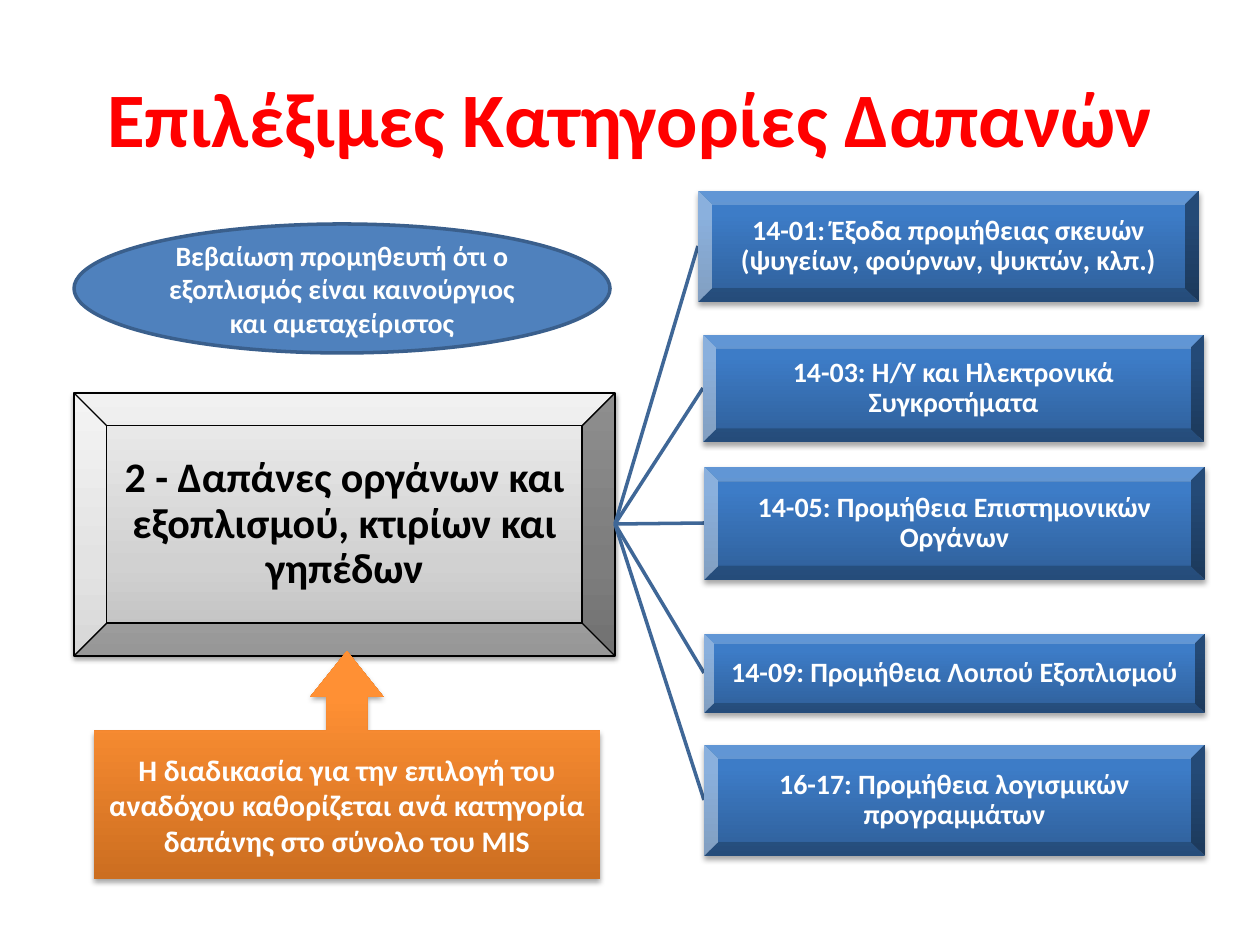
from dataclasses import dataclass

from lxml import etree
from pptx import Presentation
from pptx.dml.color import RGBColor
from pptx.enum.shapes import MSO_CONNECTOR, MSO_SHAPE
from pptx.enum.text import MSO_ANCHOR, PP_ALIGN
from pptx.oxml.ns import qn
from pptx.util import Emu, Pt

BEVEL = MSO_SHAPE.BEVEL
OVAL = MSO_SHAPE.OVAL
UP_ARROW_CALLOUT = MSO_SHAPE.UP_ARROW_CALLOUT
STRAIGHT = MSO_CONNECTOR.STRAIGHT
MIDDLE = MSO_ANCHOR.MIDDLE
CENTER = PP_ALIGN.CENTER

EMU_PER_PX = 914400 / 126
FONT = "Calibri"
WHITE = "FFFFFF"
BLACK = "000000"
GREY_STOPS = ((0, "BDBDBD"), (35, "D1D1D1"), (100, "EEEEEE"))
BLUE_STOPS = ((0, "2F5F99"), (80, "3D7CC7"), (100, "3A7CCB"))
ORANGE_STOPS = ((0, "CC6E20"), (80, "FF9034"), (100, "FF9136"))


@dataclass(frozen=True)
class Box:
    text: str
    left: int
    top: int
    width: int
    height: int

    @property
    def middle(self) -> int:
        return self.top + self.height // 2

    @property
    def right(self) -> int:
        return self.left + self.width


TITLE = Box("Επιλέξιμες Κατηγορίες Δαπανών", 63, 38, 1134, 158)
CATEGORY = Box("2 - Δαπάνες οργάνων και εξοπλισμού, κτιρίων και γηπέδων", 74, 393, 541, 263)
EXPENSES = (
    Box("14-01: Έξοδα προμήθειας σκευών (ψυγείων, φούρνων, ψυκτών, κλπ.)", 698, 191, 501, 111),
    Box("14-03: Η/Υ και Ηλεκτρονικά Συγκροτήματα", 703, 335, 501, 107),
    Box("14-05: Προμήθεια Επιστημονικών Οργάνων", 704, 467, 501, 113),
    Box("14-09: Προμήθεια Λοιπού Εξοπλισμού", 704, 634, 501, 79),
    Box("16-17: Προμήθεια λογισμικών προγραμμάτων", 704, 745, 501, 111),
)
CERTIFICATE = Box("Βεβαίωση προμηθευτή ότι ο εξοπλισμός είναι καινούργιος και αμεταχείριστος",
                  74, 224, 536, 129)
PROCEDURE = Box("Η διαδικασία για την επιλογή του αναδόχου καθορίζεται ανά κατηγορία δαπάνης "
                "στο σύνολο του MIS", 94, 651, 506, 228)


def px(length: int) -> Emu:
    return Emu(round(length * EMU_PER_PX))


def color(value: str) -> RGBColor:
    return RGBColor.from_string(value)


def write_text(shape, text: str, *, size: int, fill: str = WHITE,
               spacing: float | None = None, inset: int | None = None) -> None:
    frame = shape.text_frame
    frame.word_wrap = True
    frame.vertical_anchor = MIDDLE
    if inset is not None:
        frame.margin_left = frame.margin_right = px(inset)
        frame.margin_top = frame.margin_bottom = px(inset)
    para = frame.paragraphs[0]
    para.alignment = CENTER
    para.line_spacing = spacing
    span = para.add_run()
    span.text = text
    span.font.name = FONT
    span.font.size = Pt(size)
    span.font.bold = True
    span.font.color.rgb = color(fill)


def add_box(page, kind, box: Box):
    shape = page.shapes.add_shape(kind, px(box.left), px(box.top), px(box.width), px(box.height))
    shape.shadow.inherit = False
    shape.line.fill.background()
    return shape


def set_line(shape, value: str, width: float) -> None:
    shape.line.color.rgb = color(value)
    shape.line.width = Pt(width)


def set_gradient(shape, stops: tuple) -> None:
    shape.fill.gradient()
    shape.fill.gradient_angle = 90
    stop_list = shape._element.spPr.find(qn("a:gradFill")).find(qn("a:gsLst"))
    for stop in list(stop_list):
        stop_list.remove(stop)
    for position, value in stops:
        stop = etree.SubElement(stop_list, qn("a:gs"), pos=str(position * 1000))
        etree.SubElement(stop, qn("a:srgbClr"), val=value)


def add_shadow(shape, *, opacity: int, distance: float) -> None:
    effects = shape._element.spPr.find(qn("a:effectLst"))
    shadow = etree.SubElement(effects, qn("a:outerShdw"), blurRad=str(Pt(3.1)),
                              dist=str(Pt(distance)), dir="5400000", rotWithShape="0")
    tint = etree.SubElement(shadow, qn("a:srgbClr"), val=BLACK)
    etree.SubElement(tint, qn("a:alpha"), val=str(opacity * 1000))


def add_link(page, source: Box, target: Box) -> None:
    link = page.shapes.add_connector(STRAIGHT, px(source.right), px(source.middle),
                                     px(target.left), px(target.middle))
    set_line(link, "3F6797", 2)
    etree.SubElement(link._element.spPr, qn("a:effectLst"))


def add_expense(page, box: Box) -> None:
    shape = add_box(page, BEVEL, box)
    set_gradient(shape, BLUE_STOPS)
    add_shadow(shape, opacity=35, distance=1.8)
    write_text(shape, box.text, size=16, spacing=0.9, inset=1)


def main() -> None:
    deck = Presentation()
    deck.slide_width, deck.slide_height = px(1260), px(945)
    page = deck.slides.add_slide(deck.slide_layouts[5])

    title = page.shapes.title
    title.left, title.top = px(TITLE.left), px(TITLE.top)
    title.width, title.height = px(TITLE.width), px(TITLE.height)
    write_text(title, TITLE.text, size=44, fill="FF0000")

    category = add_box(page, BEVEL, CATEGORY)
    set_gradient(category, GREY_STOPS)
    set_line(category, BLACK, 0.75)
    add_shadow(category, opacity=38, distance=1.6)
    write_text(category, CATEGORY.text, size=24, fill=BLACK, spacing=0.9, inset=2)

    for expense in EXPENSES:
        add_link(page, CATEGORY, expense)
        add_expense(page, expense)

    certificate = add_box(page, OVAL, CERTIFICATE)
    certificate.fill.solid()
    certificate.fill.fore_color.rgb = color("4F81BD")
    set_line(certificate, "3A5F8C", 2)
    write_text(certificate, CERTIFICATE.text, size=16)

    procedure = add_box(page, UP_ARROW_CALLOUT, PROCEDURE)
    for index, value in enumerate((0.18, 0.16, 0.2, 0.65)):
        procedure.adjustments[index] = value
    set_gradient(procedure, ORANGE_STOPS)
    add_shadow(procedure, opacity=35, distance=1.8)
    write_text(procedure, PROCEDURE.text, size=17)

    deck.save("out.pptx")


if __name__ == "__main__":
    main()
